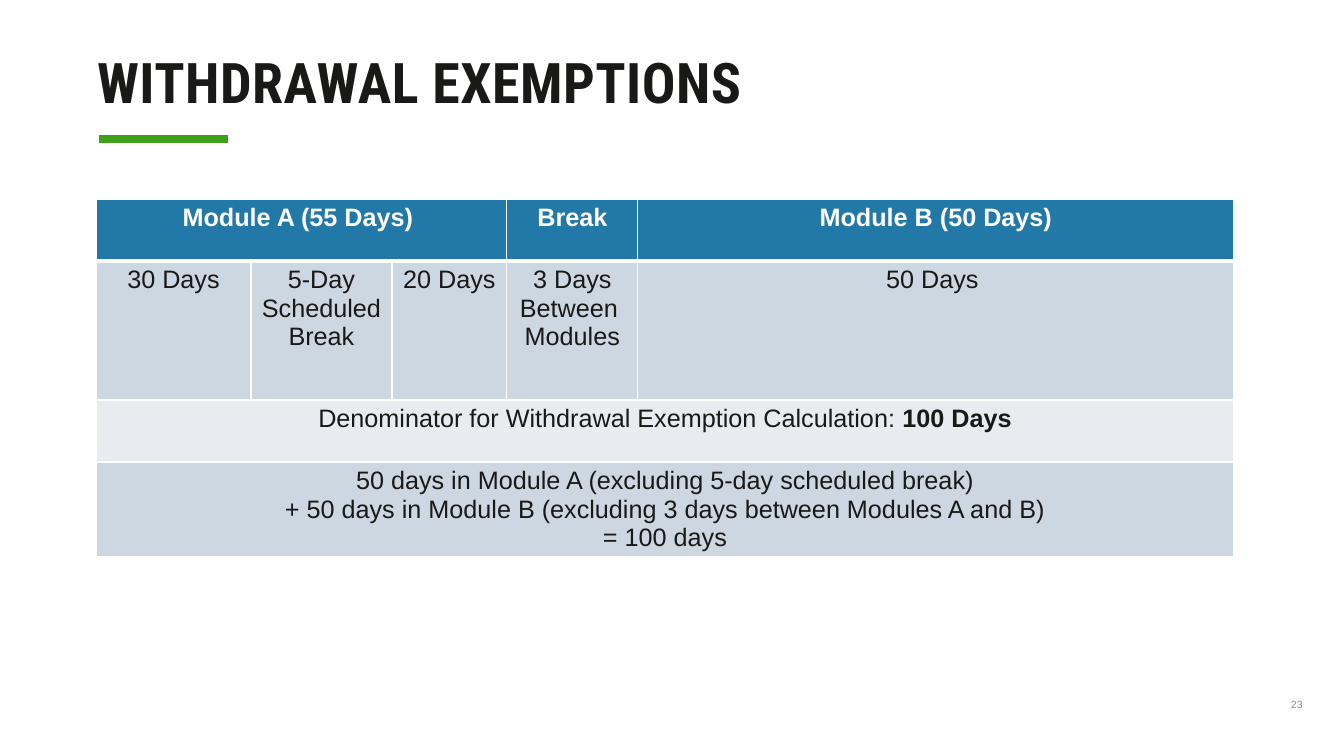
from lxml import etree
from pptx import Presentation
from pptx.dml.color import RGBColor
from pptx.enum.shapes import MSO_CONNECTOR
from pptx.enum.text import MSO_ANCHOR, MSO_AUTO_SIZE, PP_ALIGN
from pptx.oxml.ns import qn
from pptx.util import Pt

STRAIGHT = MSO_CONNECTOR.STRAIGHT
TOP = MSO_ANCHOR.TOP
NO_FIT = MSO_AUTO_SIZE.NONE
LEFT, CENTER = PP_ALIGN.LEFT, PP_ALIGN.CENTER

SCALE = 914400 / 100.8
TITLE_ONLY = 5
INK, WHITE, GREEN, GRAY = "191918", "FFFFFF", "3EA11B", "8C8C8C"
BLUE, BAND, PALE = "2279A7", "CDD7E1", "E8ECF1"

COL_WIDTHS = [155, 141, 115, 131, 596]
ROW_HEIGHTS = [62, 139, 62, 91]
ROW_FILLS = [BLUE, BAND, PALE, BAND]
MERGES = [(0, 0, 2), (2, 0, 4), (3, 0, 4)]
CELL_TEXTS = {
    (0, 0): "Module A (55 Days) ",
    (0, 3): "Break",
    (0, 4): "Module B (50 Days)",
    (1, 0): "30 Days",
    (1, 1): "5-Day Scheduled Break",
    (1, 2): "20 Days",
    (1, 3): "3 Days\nBetween \nModules",
    (1, 4): "50 Days ",
    (2, 0): "Denominator for Withdrawal Exemption Calculation: ",
    (3, 0): "50 days in Module A (excluding 5-day scheduled break)\n"
            "+ 50 days in Module B (excluding 3 days between Modules A and B)\n"
            "= 100 days",
}


def px(n):
    return round(n * SCALE)


def rgb(color):
    return RGBColor.from_string(color)


def format_run(r, size, color, bold=False, font="Arial"):
    r.font.name = font
    r.font.size = Pt(size)
    r.font.bold = bold
    r.font.color.rgb = rgb(color)


def set_frame(tf, left, top, right, bottom):
    tf.word_wrap = True
    tf.auto_size = NO_FIT
    tf.vertical_anchor = TOP
    tf.margin_left, tf.margin_top = px(left), px(top)
    tf.margin_right, tf.margin_bottom = px(right), px(bottom)


def add_title(s, text):
    sp = s.shapes.title
    sp.left, sp.top, sp.width, sp.height = px(84), px(48), px(979), px(88)
    tf = sp.text_frame
    tf.text = text
    set_frame(tf, 13, 7, 13, 7)
    p = tf.paragraphs[0]
    p.alignment = LEFT
    p.line_spacing = 0.9
    r = p.runs[0]
    format_run(r, 40, INK, True, "Roboto Condensed")
    r.font._element.set("spc", "40")


def add_rule(s, x1, x2, y):
    line = s.shapes.add_connector(STRAIGHT, px(x1), px(y), px(x2), px(y))
    line.line.color.rgb = rgb(GREEN)
    line.line.width = Pt(6.25)
    etree.SubElement(line._element.spPr, qn("a:effectLst"))


def add_page_number(s, text):
    tf = s.shapes.add_textbox(px(1291), px(698), px(42), px(41)).text_frame
    tf.text = text
    set_frame(tf, 0, 0, 10, 5)
    format_run(tf.paragraphs[0].runs[0], 7.5, GRAY)


def set_border(cell, side, width):
    ln = etree.SubElement(cell._tc.get_or_add_tcPr(), qn(f"a:{side}"), w=str(Pt(width)))
    fill = etree.SubElement(ln, qn("a:solidFill"))
    etree.SubElement(fill, qn("a:srgbClr"), val=WHITE)


def style_cell(cell, row):
    for side in ("lnL", "lnR", "lnT", "lnB"):
        heavy = (row, side) in ((0, "lnB"), (1, "lnT"))
        set_border(cell, side, 3 if heavy else 1)
    cell.fill.solid()
    cell.fill.fore_color.rgb = rgb(ROW_FILLS[row])


def fill_cell(cell, text, header):
    cell.text_frame.text = text
    for p in cell.text_frame.paragraphs:
        p.alignment = CENTER
        for r in p.runs:
            format_run(r, 18, WHITE if header else INK, header)


def add_days_table(s):
    rows, cols = len(ROW_HEIGHTS), len(COL_WIDTHS)
    frame = s.shapes.add_table(rows, cols, px(96), px(199),
                               px(sum(COL_WIDTHS)), px(sum(ROW_HEIGHTS)))
    table = frame.table
    for col, width in zip(table.columns, COL_WIDTHS):
        col.width = px(width)
    for row, height in zip(table.rows, ROW_HEIGHTS):
        row.height = px(height)
    for row in range(rows):
        for col in range(cols):
            style_cell(table.cell(row, col), row)
    for row, first, last in MERGES:
        table.cell(row, first).merge(table.cell(row, last))
    for (row, col), text in CELL_TEXTS.items():
        fill_cell(table.cell(row, col), text, row == 0)
    total = table.cell(2, 0).text_frame.paragraphs[0].add_run()
    total.text = "100 Days"
    format_run(total, 18, INK, True)


def main():
    prs = Presentation()
    prs.slide_width, prs.slide_height = px(1344), px(756)
    s = prs.slides.add_slide(prs.slide_layouts[TITLE_ONLY])
    add_rule(s, 99, 228, 139)
    add_title(s, "WITHDRAWAL EXEMPTIONS")
    add_page_number(s, "23")
    add_days_table(s)
    prs.save("out.pptx")


if __name__ == "__main__":
    main()
